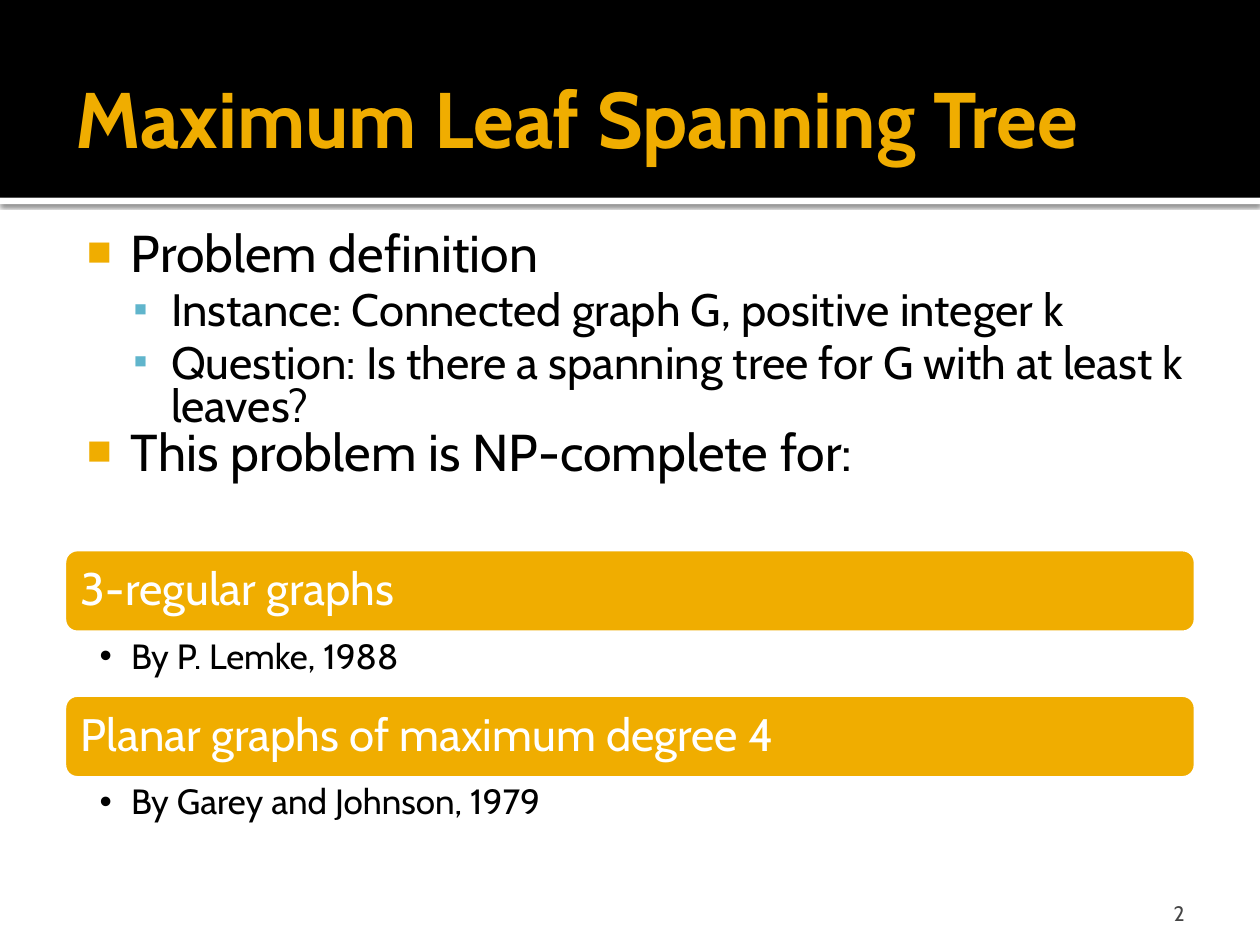
from dataclasses import dataclass
from lxml.etree import SubElement
from pptx import Presentation
from pptx.dml.color import RGBColor
from pptx.enum.shapes import MSO_SHAPE as Shape
from pptx.enum.text import MSO_ANCHOR as Anchor, PP_ALIGN as Align
from pptx.oxml.ns import qn
from pptx.util import Inches, Pt


@dataclass(frozen=True)
class Theme:
    """Colours, font and type sizes of the slide."""
    font: str = "Cabin"
    gold: str = "F0AD00"
    blue: str = "60B5CC"
    black: str = "000000"
    white: str = "FFFFFF"
    grey: str = "454545"
    title: float = 45
    topic: float = 29.6
    detail: float = 25.9
    heading: float = 26
    credit: float = 20
    number: float = 12


THEME = Theme()
TOPIC = {"size": THEME.topic, "indent": (0.48, 0.35), "bullet": ("■", THEME.gold, 80),
         "line_spacing": 0.8}
DETAIL = {"size": THEME.detail, "indent": (0.8, 0.3), "bullet": ("▪", THEME.blue, 90),
          "line_spacing": 0.8, "space_before": Pt(5.2), "level": 1}
HEADING = {"size": THEME.heading, "color": THEME.white, "line_spacing": 0.9}
CREDIT = {"size": THEME.credit, "indent": (0.25, 0.25), "bullet": ("•", THEME.black, 100),
          "line_spacing": 0.9, "space_after": Pt(4), "level": 1}


def add_bullet(paragraph, bullet, indent):
    """Give a paragraph a hanging bullet of its own colour and size."""
    character, color, percent = bullet
    margin, hanging = indent
    properties = paragraph._p.get_or_add_pPr()
    properties.set("marL", str(Inches(margin)))
    properties.set("indent", str(-Inches(hanging)))
    bullet_color = SubElement(properties, qn("a:buClr"))
    SubElement(bullet_color, qn("a:srgbClr"), val=color)
    SubElement(properties, qn("a:buSzPct"), val=str(percent * 1000))
    SubElement(properties, qn("a:buFont"), typeface="Arial")
    SubElement(properties, qn("a:buChar"), char=character)


def write(paragraph, text, size, color=THEME.black, bold=False, bullet=None, indent=None, **formats):
    """Write one styled run into a paragraph."""
    for name, value in formats.items():
        setattr(paragraph, name, value)
    if bullet:
        add_bullet(paragraph, bullet, indent)
    run = paragraph.add_run()
    run.text = text
    for name, value in {"name": THEME.font, "size": Pt(size), "bold": bold}.items():
        setattr(run.font, name, value)
    run.font.color.rgb = RGBColor.from_string(color)


def fill_frame(shape, lines, insets, anchor=Anchor.TOP):
    """Fill a text frame with (text, style) lines."""
    frame = shape.text_frame
    frame.word_wrap = True
    frame.vertical_anchor = anchor
    for side, inset in zip(("left", "top", "right", "bottom"), insets):
        setattr(frame, f"margin_{side}", Inches(inset))
    for index, (text, style) in enumerate(lines):
        paragraph = frame.add_paragraph() if index else frame.paragraphs[0]
        write(paragraph, text, **{"alignment": Align.LEFT, **style})


def add_text(slide, box, lines, insets, anchor=Anchor.TOP):
    """Place a text box."""
    shape = slide.shapes.add_textbox(*map(Inches, box))
    fill_frame(shape, lines, insets, anchor)


def add_block(slide, kind, box, color):
    """Place a plain filled shape without line or shadow."""
    shape = slide.shapes.add_shape(kind, *map(Inches, box))
    shape.shadow.inherit = False
    shape.fill.solid()
    shape.fill.fore_color.rgb = RGBColor.from_string(color)
    shape.line.fill.background()
    return shape


def add_drop_shadow(shape):
    """Cast a soft shadow straight down."""
    effects = shape._element.spPr.find(qn("a:effectLst"))
    shadow = SubElement(effects, qn("a:outerShdw"), blurRad=str(Pt(2.5)), dist=str(Pt(0.8)),
                        dir="5400000", algn="tl", rotWithShape="0")
    color = SubElement(shadow, qn("a:srgbClr"), val=THEME.black)
    SubElement(color, qn("a:alpha"), val="60000")


def add_header(slide, box, title):
    """Place the title band with its shadowed white edge."""
    left, top, width, height = box
    edge = add_block(slide, Shape.RECTANGLE, (left, top + height, width, 0.05), THEME.white)
    add_drop_shadow(edge)
    add_block(slide, Shape.RECTANGLE, box, THEME.black)
    style = {"size": THEME.title, "color": THEME.gold, "bold": True}
    add_text(slide, (left + 0.5, top + 0.3, width - 1, 1.25), [(title, style)],
             (0.1, 0.05, 0.05, 0.05), Anchor.MIDDLE)


def add_results(slide, box, results):
    """Stack a rounded heading bar and a credit line for each result."""
    left, top, width, height = box
    step = height / len(results)
    bar_height = 0.68
    for index, (heading, credit) in enumerate(results):
        bar_top = top + index * step
        bar = add_block(slide, Shape.ROUNDED_RECTANGLE, (left, bar_top, width, bar_height), THEME.gold)
        bar.line.color.rgb = RGBColor.from_string(THEME.white)
        bar.line.width = Pt(3.78)
        fill_frame(bar, [(heading, HEADING)], (0.11, 0.11, 0.11, 0.11), Anchor.MIDDLE)
        add_text(slide, (left, bar_top + bar_height, width, step - bar_height),
                 [(credit, CREDIT)], (0.29, 0.04, 0.2, 0.04))


def add_slide_number(slide, box, number):
    """Place the slide number at the lower right."""
    style = {"size": THEME.number, "color": THEME.grey, "alignment": Align.RIGHT}
    add_text(slide, box, [(number, style)], (0.1, 0.05, 0.1, 0), Anchor.BOTTOM)


def main():
    """Build and save the slide."""
    presentation = Presentation()
    presentation.slide_width, presentation.slide_height = Inches(10), Inches(7.5)
    slide = presentation.slides.add_slide(presentation.slide_layouts[6])
    add_header(slide, (0, 0, 10, 1.57), "Maximum Leaf Spanning Tree")
    add_text(slide, (0.5, 1.75, 9, 2.39), [
        ("Problem definition", TOPIC),
        ("Instance: Connected graph G, positive integer k", DETAIL),
        ("Question: Is there a spanning tree for G with at least k leaves?", DETAIL),
        ("This problem is NP-complete for:", TOPIC),
    ], (0.06, 0.1, 0.1, 0.05))
    add_results(slide, (0.5, 4.35, 9, 2.31), [
        ("3-regular graphs", "By P. Lemke, 1988"),
        ("Planar graphs of maximum degree 4", "By Garey and Johnson, 1979"),
    ])
    add_slide_number(slide, (7.17, 6.83, 2.33, 0.52), "2")
    presentation.save("out.pptx")


if __name__ == "__main__":
    main()
